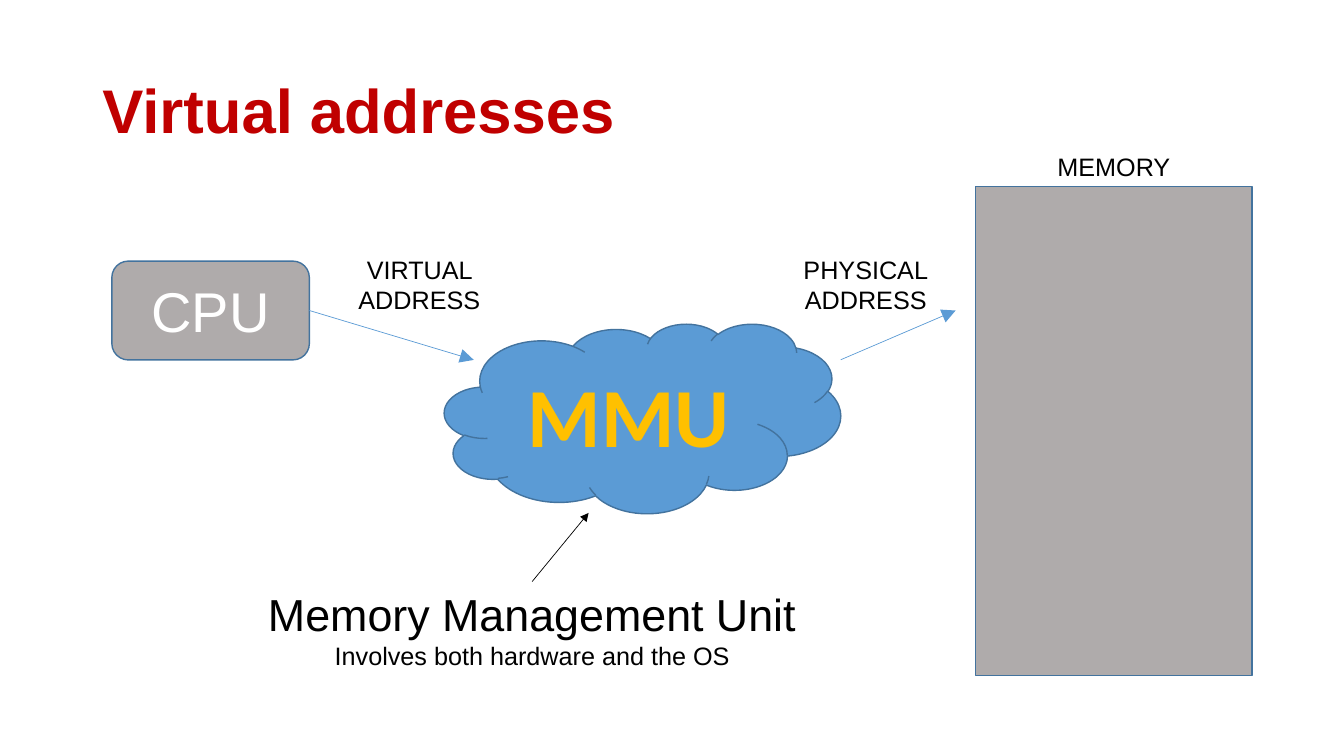
import lxml.etree
import pptx
import pptx.dml.color
import pptx.enum.shapes
import pptx.enum.text
import pptx.oxml.ns
import pptx.util

Pt = pptx.util.Pt
SHAPE = pptx.enum.shapes.MSO_SHAPE
ALIGN = pptx.enum.text.PP_ALIGN
ANCHOR = pptx.enum.text.MSO_ANCHOR
GRAY, BLUE, OUTLINE = "AFABAB", "5B9BD5", "43739E"


def color(hex_value):
    """Turn a hex string into a colour."""
    return pptx.dml.color.RGBColor.from_string(hex_value)


def place(box):
    """Convert a box in points to lengths."""
    return [Pt(value) for value in box]


def write(paragraph, text, size=18, font="Arial", fill="000000", bold=False,
          align=ALIGN.CENTER, spacing=None):
    """Fill a paragraph with formatted text."""
    paragraph.text = text
    paragraph.alignment = align
    if spacing:
        paragraph.line_spacing = spacing
    for run in paragraph.runs:
        run.font.size = Pt(size)
        run.font.name = font
        run.font.bold = bold
        run.font.color.rgb = color(fill)


def add_block(slide, kind, box, fill):
    """Add an outlined shape."""
    shape = slide.shapes.add_shape(kind, *place(box))
    shape.shadow.inherit = False
    shape.fill.solid()
    shape.fill.fore_color.rgb = color(fill)
    shape.line.color.rgb = color(OUTLINE)
    shape.line.width = Pt(1)
    shape.text_frame.vertical_anchor = ANCHOR.MIDDLE
    return shape


def add_label(slide, box, text, **text_format):
    """Add a wrapping, centred text box."""
    label = slide.shapes.add_textbox(*place(box))
    label.text_frame.word_wrap = True
    label.text_frame.auto_size = pptx.enum.text.MSO_AUTO_SIZE.SHAPE_TO_FIT_TEXT
    write(label.text_frame.paragraphs[0], text, **text_format)
    return label


def add_arrow(slide, start, end, line_color=BLUE, head="lg"):
    """Add a thin arrow between two points."""
    arrow = slide.shapes.add_connector(
        pptx.enum.shapes.MSO_CONNECTOR.STRAIGHT, *place(start + end))
    arrow.line.color.rgb = color(line_color)
    arrow.line.width = Pt(0.5)
    qualified = pptx.oxml.ns.qn
    lxml.etree.SubElement(arrow.line._get_or_add_ln(), qualified("a:tailEnd"),
                          type="triangle", w=head, len=head)
    lxml.etree.SubElement(arrow._element.spPr, qualified("a:effectLst"))
    return arrow


def add_title(slide, box, text):
    """Place the title placeholder."""
    title = slide.shapes.title
    title.left, title.top, title.width, title.height = place(box)
    title.text_frame.vertical_anchor = ANCHOR.MIDDLE
    write(title.text_frame.paragraphs[0], text, size=44, fill="C00000",
          bold=True, align=ALIGN.LEFT, spacing=0.9)


def add_processor(slide, box):
    """Draw the CPU with its outgoing virtual address."""
    left, top, width, height = box
    processor = add_block(slide, SHAPE.ROUNDED_RECTANGLE, box, GRAY)
    write(processor.text_frame.paragraphs[0], "CPU", size=40, fill="FFFFFF")
    right, middle = left + width, top + height / 2
    arrow = add_arrow(slide, (right, middle), (right + 117.4, top + height))
    arrow.begin_connect(processor, 3)
    add_label(slide, (right + 26, top - 8.7, 105.1, 51.1), "VIRTUAL ADDRESS")


def add_translation_unit(slide, box):
    """Draw the MMU cloud with its outgoing physical address."""
    left, top, width, height = box
    cloud = add_block(slide, SHAPE.CLOUD, box, BLUE)
    write(cloud.text_frame.paragraphs[0], "MMU", size=60, font="Calibri",
          fill="FFC000", bold=True)
    right = left + width
    add_arrow(slide, (right, top + 25.9), (right + 82.1, top - 9.3))
    add_label(slide, (right - 34.6, top - 53.3, 105.1, 51.1),
              "PHYSICAL\vADDRESS")


def add_memory(slide, box):
    """Draw the memory block under its heading."""
    left, top, width, height = box
    add_block(slide, SHAPE.RECTANGLE, box, GRAY)
    add_label(slide, (left + 24, top - 28.8, width - 48, 28.8), "MEMORY")


def add_caption(slide, box):
    """Explain the MMU, with an arrow pointing up at it."""
    left, top, width, height = box
    caption = add_label(slide, box, "Memory Management Unit", size=32)
    write(caption.text_frame.add_paragraph(),
          "Involves both hardware and the OS")
    center = left + width / 2
    arrow = add_arrow(slide, (center, top), (center + 40.3, top - 49),
                      line_color="000000", head="med")
    arrow.begin_connect(caption, 0)


def main():
    """Build and save the presentation."""
    presentation = pptx.Presentation()
    presentation.slide_width, presentation.slide_height = Pt(960), Pt(540)
    slide = presentation.slides.add_slide(presentation.slide_layouts[5])
    add_title(slide, (66, 28.8, 828, 104.4), "Virtual addresses")
    add_processor(slide, (79.9, 186.5, 141.1, 70.6))
    add_translation_unit(slide, (317.5, 231.1, 283, 135.4))
    add_memory(slide, (697, 133.2, 197.3, 349.2))
    add_caption(slide, (177.1, 415.4, 406.1, 67.7))
    presentation.save("out.pptx")


if __name__ == "__main__":
    main()
